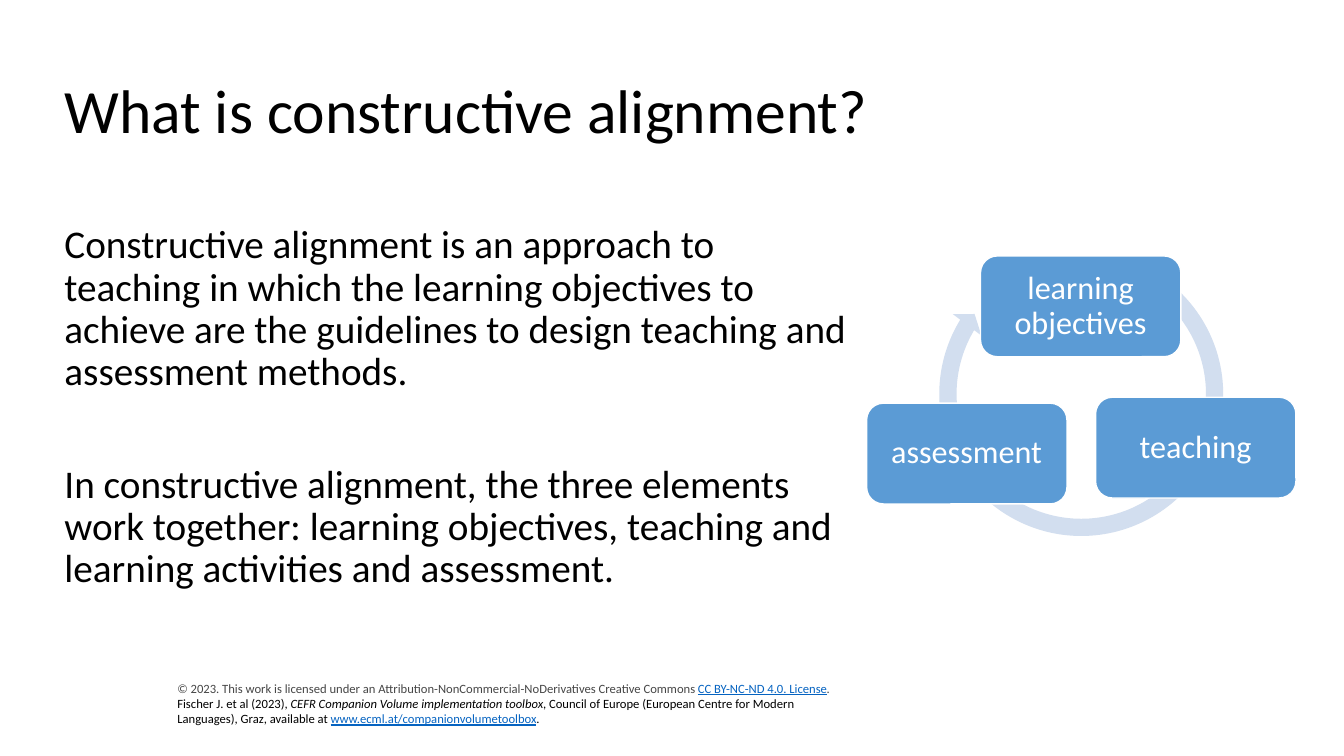
from pptx import Presentation
from pptx import util as u
from pptx.dml.color import RGBColor
from pptx.enum import shapes, text
from pptx.oxml.xmlchemy import OxmlElement

BLACK, WHITE, GREY = "000000", "FFFFFF", "464646"
LINK, BLUE, PALE = "0563C1", "5B9BD5", "D2DEEF"


def tint(fmt, hue):
    fmt.rgb = RGBColor.from_string(hue)


def fill(shape, hue):
    shape.fill.solid()
    tint(shape.fill.fore_color, hue)
    shape.shadow.inherit = False


def put(obj, **vals):
    for key, val in vals.items():
        setattr(obj, key, val)


def place(shape, box):
    put(shape, **dict(zip(("left", "top", "width", "height"), map(u.Cm, box))))


def write(par, words, size, hue, **vals):
    run = par.add_run()
    run.text = words
    put(run.font, name="Calibri", size=u.Pt(size), **vals)
    tint(run.font.color, hue)


def title(slide, box, words):
    shape = slide.shapes.title
    place(shape, box)
    frame = shape.text_frame
    put(frame, vertical_anchor=text.MSO_ANCHOR.MIDDLE,
        auto_size=text.MSO_AUTO_SIZE.NONE)
    par = frame.paragraphs[0]
    put(par, alignment=text.PP_ALIGN.LEFT, line_spacing=0.9)
    write(par, words, 44, BLACK)


def body(slide, box, items):
    shape = slide.placeholders[1]
    place(shape, box)
    frame = shape.text_frame
    frame.auto_size = text.MSO_AUTO_SIZE.NONE
    for num, words in enumerate(items):
        par = frame.add_paragraph() if num else frame.paragraphs[0]
        props = par._p.get_or_add_pPr()
        props.set("marL", "0")
        props.set("indent", "0")
        props.append(OxmlElement("a:buNone"))
        put(par, line_spacing=0.9, space_before=u.Pt(50 if num else 0))
        write(par, words, 28, BLACK)


def cycle(slide, box):
    """Ring arrow with the three elements on it, offsets from the box corner."""
    left, top = box
    ring = slide.shapes.add_shape(shapes.MSO_SHAPE.CIRCULAR_ARROW, 0, 0, 0, 0)
    place(ring, (left + 1.6, top, 7.62, 7.62))
    for num, val in enumerate((0.057, 3.405, 126.718, 180.941, 0.059)):
        ring.adjustments[num] = val
    fill(ring, PALE)
    ring.line.fill.background()
    nodes = (("learning objectives", 2.87, 0.33),
             ("teaching", 5.77, 3.89),
             ("assessment", 0, 4.04))
    for words, dx, dy in nodes:
        node(slide, (left + dx, top + dy, 5.05, 2.54), words)


def node(slide, box, words):
    shape = slide.shapes.add_shape(
        shapes.MSO_SHAPE.ROUNDED_RECTANGLE, *map(u.Cm, box))
    fill(shape, BLUE)
    tint(shape.line.color, WHITE)
    shape.line.width = u.Pt(1)
    frame = shape.text_frame
    pad = u.Cm(0.25)
    put(frame, word_wrap=True, vertical_anchor=text.MSO_ANCHOR.MIDDLE,
        margin_left=pad, margin_right=pad, margin_top=pad, margin_bottom=pad)
    par = frame.paragraphs[0]
    put(par, alignment=text.PP_ALIGN.CENTER, line_spacing=0.9)
    write(par, words, 23, WHITE)


def credit(slide, box):
    frame = slide.shapes.add_textbox(*map(u.Cm, box)).text_frame
    put(frame, word_wrap=True, vertical_anchor=text.MSO_ANCHOR.MIDDLE)
    link = {"underline": True}
    slant = {"italic": True}
    lines = (
        (("© 2023. This work is licensed under an "
          "Attribution-NonCommercial-NoDerivatives Creative Commons ", GREY, {}),
         ("CC BY-NC-ND 4.0. License", LINK, link),
         (".", GREY, slant)),
        (("Fischer J. et al (2023), ", BLACK, {}),
         ("CEFR Companion Volume implementation toolbox", BLACK, slant),
         (", Council of Europe (European Centre for Modern Languages), "
          "Graz, available at ", BLACK, {}),
         ("www.ecml.at/companionvolumetoolbox", LINK, link),
         (".", BLACK, {})),
    )
    for num, runs in enumerate(lines):
        par = frame.add_paragraph() if num else frame.paragraphs[0]
        for words, hue, vals in runs:
            write(par, words, 9, hue, **vals)


def main():
    deck = Presentation()
    put(deck, slide_width=u.Cm(33.87), slide_height=u.Cm(19.05))
    slide = deck.slides.add_slide(deck.slide_layouts[1])
    title(slide, (1.37, 1.02, 31.17, 3.68), "What is constructive alignment?")
    body(slide, (1.37, 5.54, 20.47, 10.06), (
        "Constructive alignment is an approach to teaching in which the "
        "learning objectives to achieve are the guidelines to design "
        "teaching and assessment methods.",
        "In constructive alignment, the three elements work together: "
        "learning objectives, teaching and learning activities and "
        "assessment."))
    cycle(slide, (21.84, 6.12))
    credit(slide, (4.22, 17.02, 17.4, 1.42))
    deck.save("out.pptx")


if __name__ == "__main__":
    main()
